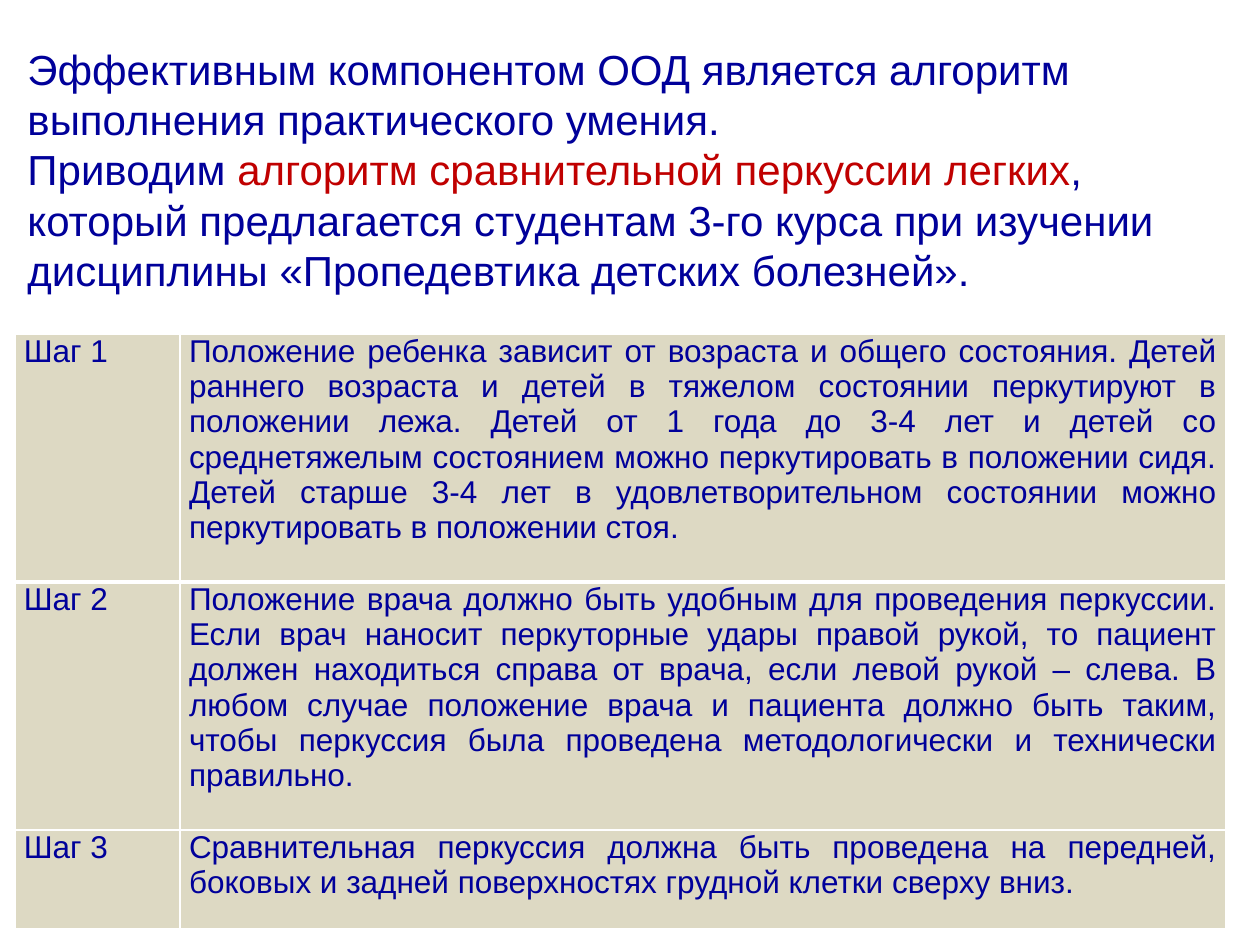
from pptx import Presentation
from pptx.dml.color import RGBColor
from pptx.enum.text import MSO_ANCHOR, MSO_AUTO_SIZE, PP_ALIGN
from pptx.oxml import parse_xml
from pptx.oxml.ns import nsdecls
from pptx.util import Cm, Pt

LEFT, JUSTIFY = PP_ALIGN.LEFT, PP_ALIGN.JUSTIFY
TOP = MSO_ANCHOR.TOP
NO_FIT = MSO_AUTO_SIZE.NONE
TITLE_ONLY = 5

COLORS = {"text": "00009A", "accent": "C00000", "cell": "DDD9C3", "border": "FFFFFF"}

INTRO = [
    [("Эффективным компонентом ООД является алгоритм выполнения практического умения.", "text")],
    [("Приводим ", "text"),
     ("алгоритм сравнительной перкуссии легких", "accent"),
     (", который предлагается студентам 3-го курса при изучении дисциплины "
      "«Пропедевтика детских болезней».", "text")],
]

STEPS = [
    "Положение ребенка зависит от возраста и общего состояния. Детей раннего возраста "
    "и детей в тяжелом состоянии перкутируют в положении лежа. Детей от 1 года до 3-4 лет "
    "и детей со среднетяжелым состоянием можно перкутировать в положении сидя. Детей старше "
    "3-4 лет в удовлетворительном состоянии можно перкутировать в положении стоя.",
    "Положение врача должно быть удобным для проведения перкуссии. Если врач наносит "
    "перкуторные удары правой рукой, то пациент должен находиться справа от врача, если "
    "левой рукой – слева. В любом случае положение врача и пациента должно быть таким, "
    "чтобы перкуссия была проведена методологически и технически правильно.",
    "Сравнительная перкуссия должна быть проведена на передней, боковых и задней "
    "поверхностях грудной клетки сверху вниз.",
]


class SlideBuilder:
    font = "Arial"
    title_size = Pt(24)
    cell_size = Pt(18)

    def __init__(self, s):
        self.s = s

    def style(self, r, size, color):
        r.font.name = self.font
        r.font.size = size
        r.font.color.rgb = RGBColor.from_string(COLORS[color])

    def title(self, paragraphs, left, top, width, height):
        sp = self.s.shapes.title
        sp.left, sp.top, sp.width, sp.height = left, top, width, height
        tf = sp.text_frame
        tf.word_wrap = True
        tf.auto_size = NO_FIT
        tf.vertical_anchor = TOP
        for i, parts in enumerate(paragraphs):
            p = tf.add_paragraph() if i else tf.paragraphs[0]
            p.alignment = LEFT
            for text, color in parts:
                r = p.add_run()
                r.text = text
                self.style(r, self.title_size, color)

    def borders(self, cell, widths):
        tc_pr = cell._tc.get_or_add_tcPr()
        for i, (side, width) in enumerate(zip("LRTB", widths)):
            tc_pr.insert(i, parse_xml(
                f'<a:ln{side} {nsdecls("a")} w="{Pt(width)}"><a:solidFill>'
                f'<a:srgbClr val="{COLORS["border"]}"/></a:solidFill></a:ln{side}>'))

    def cell(self, cell, text, widths):
        cell.margin_left = cell.margin_right = Cm(0.18)
        cell.margin_top = cell.margin_bottom = 0
        cell.vertical_anchor = TOP
        cell.fill.solid()
        cell.fill.fore_color.rgb = RGBColor.from_string(COLORS["cell"])
        self.borders(cell, widths)
        p = cell.text_frame.paragraphs[0]
        p.text = text
        p.alignment = JUSTIFY
        self.style(p.runs[0], self.cell_size, "text")

    def table(self, rows, left, top, col_widths, row_heights):
        table = self.s.shapes.add_table(len(rows), len(col_widths), left, top,
                                        sum(col_widths), sum(row_heights)).table
        for column, width in zip(table.columns, col_widths):
            column.width = width
        for i, (values, height) in enumerate(zip(rows, row_heights)):
            table.rows[i].height = height
            widths = (1, 1, 3 if i == 1 else 1, 3 if i == 0 else 1)
            for j, text in enumerate(values):
                self.cell(table.cell(i, j), text, widths)


def main():
    prs = Presentation()
    prs.slide_width, prs.slide_height = Cm(25.4), Cm(19.05)
    builder = SlideBuilder(prs.slides.add_slide(prs.slide_layouts[TITLE_ONLY]))
    builder.title(INTRO, Cm(0.3), Cm(0.74), Cm(24.41), Cm(5.38))
    rows = [(f"Шаг {n}", text) for n, text in enumerate(STEPS, 1)]
    builder.table(rows, Cm(0.3), Cm(6.73), (Cm(3.33), Cm(21.08)), (Cm(5), Cm(5), Cm(2)))
    prs.save("out.pptx")


if __name__ == "__main__":
    main()
